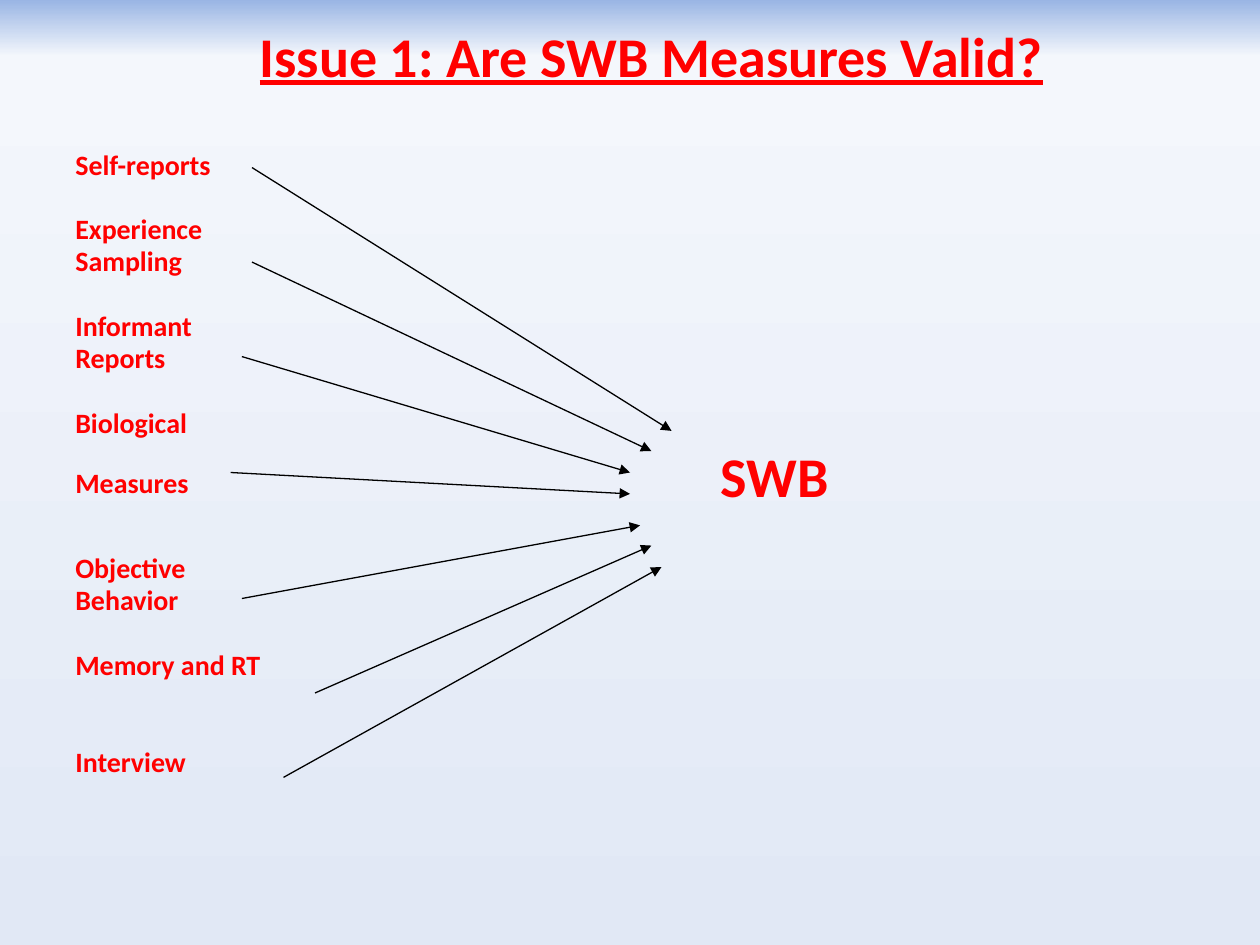
from copy import deepcopy

from pptx import Presentation
from pptx.dml.color import RGBColor
from pptx.enum import shapes, text
from pptx.oxml.ns import qn
from pptx.util import Inches, Pt

RED = "FF0000"
LINE_GAP = 3
GROUP_GAP = 21.6
MEASURES = [
    ("Self-reports", 0),
    ("Experience", GROUP_GAP),
    ("Sampling", LINE_GAP),
    ("Informant", GROUP_GAP),
    ("Reports", LINE_GAP),
    ("Biological", GROUP_GAP),
    ("Measures", 18.7),
    ("Objective", 33.5),
    ("Behavior", LINE_GAP),
    ("Memory and RT", GROUP_GAP),
    ("Interview", 40.2),
]
ARROWS = [
    ((2, 1.33), (5.33, 3.42)),
    ((2, 2.08), (5.17, 3.58)),
    ((1.92, 2.83), (5, 3.75)),
    ((1.83, 3.75), (5, 3.92)),
    ((1.92, 4.75), (5.08, 4.17)),
    ((2.5, 5.5), (5.17, 4.33)),
    ((2.25, 6.17), (5.25, 4.5)),
]


def color(value):
    return RGBColor.from_string(value)


def add_text(slide, box, lines, size=16, underline=False, inset=(0.1, 0.05),
             align=text.PP_ALIGN.LEFT, anchor=text.MSO_ANCHOR.TOP, spacing=1.0):
    frame = slide.shapes.add_textbox(*map(Inches, box)).text_frame
    frame.word_wrap = True
    frame.vertical_anchor = anchor
    frame.margin_left = frame.margin_right = Inches(inset[0])
    frame.margin_top = frame.margin_bottom = Inches(inset[1])
    for index, (line, gap) in enumerate(lines):
        paragraph = frame.add_paragraph() if index else frame.paragraphs[0]
        paragraph.alignment = align
        paragraph.line_spacing = spacing
        paragraph.space_before = Pt(gap)
        run = paragraph.add_run()
        run.text = line
        run.font.name = "Calibri"
        run.font.size = Pt(size)
        run.font.bold = True
        run.font.underline = underline
        run.font.color.rgb = color(RED)


def paint_background(slide, colors, middle):
    fill = slide.background.fill
    fill.gradient()
    fill.gradient_angle = 270
    stops = fill.gradient_stops
    first = stops[0]._gs
    first.addnext(deepcopy(first))
    for stop, value, position in zip(fill.gradient_stops, colors, (0, middle, 1)):
        stop.color.rgb = color(value)
        stop.position = position


def add_title(slide, box):
    add_text(slide, box, [("Issue 1: Are SWB Measures Valid?", 0)], size=32,
             underline=True, align=text.PP_ALIGN.CENTER,
             anchor=text.MSO_ANCHOR.MIDDLE)


def add_measures(slide, box):
    add_text(slide, box, MEASURES, spacing=0.8)


def add_outcome(slide, box):
    add_text(slide, box, [("SWB", 0)], size=32, inset=(0, 0))


def add_arrow(slide, start, end):
    arrow = slide.shapes.add_connector(
        shapes.MSO_CONNECTOR.STRAIGHT, *map(Inches, start + end))
    arrow.line.color.rgb = color("000000")
    arrow.line.width = Pt(0.75)
    line = arrow.line._get_or_add_ln()
    line.append(line.makeelement(qn("a:tailEnd"), {"type": "triangle"}))
    line.addnext(line.makeelement(qn("a:effectLst"), {}))


def main():
    deck = Presentation()
    deck.slide_width, deck.slide_height = Inches(10), Inches(7.5)
    slide = deck.slides.add_slide(deck.slide_layouts[6])
    paint_background(slide, ("9AB5E4", "F4F7FC", "E1E8F5"), 0.06)
    add_title(slide, (0.67, 0, 9, 0.87))
    add_measures(slide, (0.5, 1.17, 2, 5.53))
    add_outcome(slide, (5.72, 3.5, 1, 0.55))
    for start, end in ARROWS:
        add_arrow(slide, start, end)
    deck.save("out.pptx")


if __name__ == "__main__":
    main()
